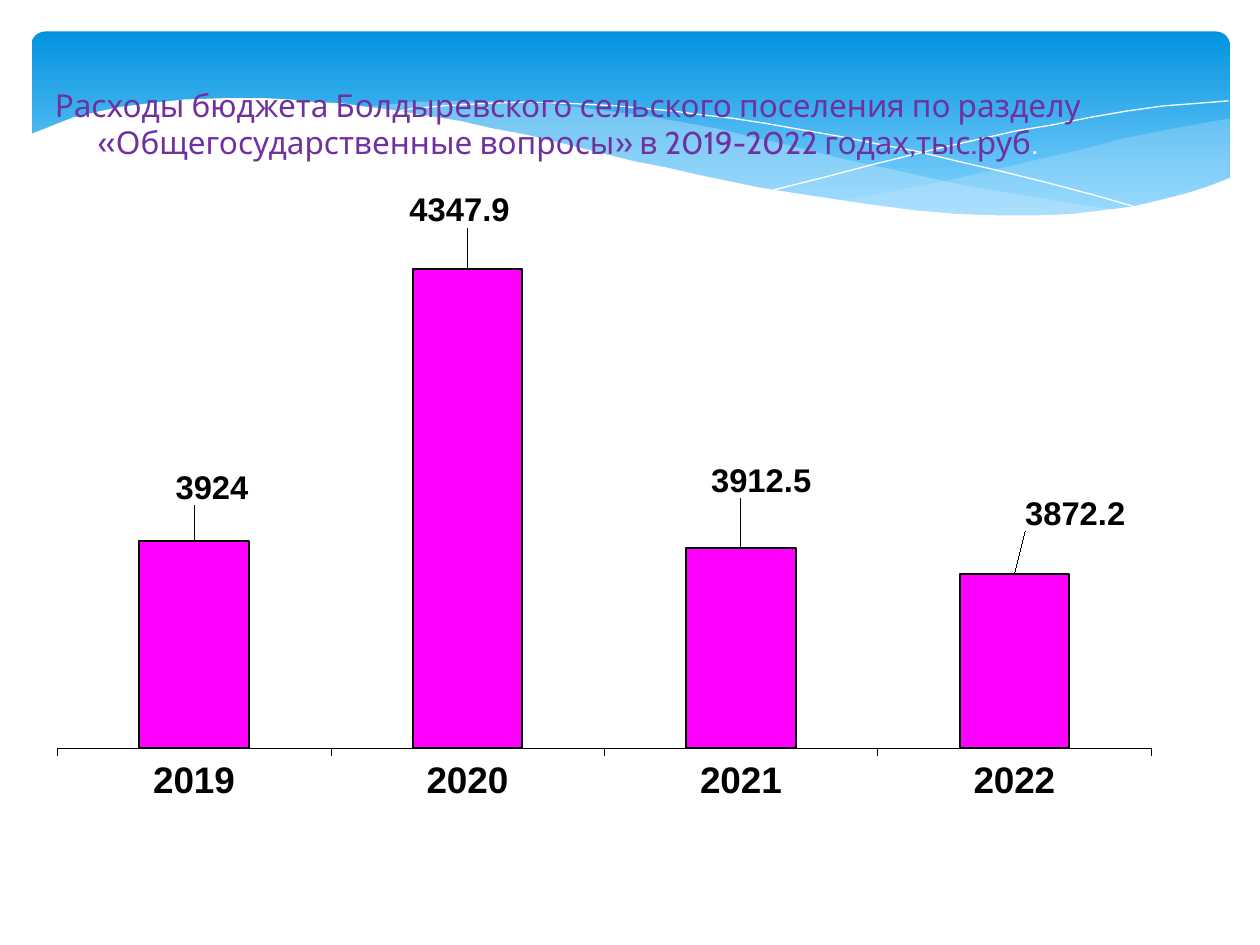
from lxml import etree
from pptx import Presentation
from pptx.chart.data import CategoryChartData
from pptx.dml.color import RGBColor
from pptx.enum.chart import (XL_CHART_TYPE, XL_LABEL_POSITION,
                             XL_TICK_LABEL_POSITION, XL_TICK_MARK)
from pptx.enum.shapes import MSO_SHAPE
from pptx.enum.text import MSO_ANCHOR, PP_ALIGN
from pptx.oxml.ns import qn
from pptx.util import Inches, Pt

COLUMN = XL_CHART_TYPE.COLUMN_CLUSTERED
OUT_END = XL_LABEL_POSITION.OUTSIDE_END
LOW = XL_TICK_LABEL_POSITION.LOW
TICK_OUT, TICK_NONE = XL_TICK_MARK.OUTSIDE, XL_TICK_MARK.NONE
ROUND = MSO_SHAPE.ROUNDED_RECTANGLE
CENTER, MIDDLE = PP_ALIGN.CENTER, MSO_ANCHOR.MIDDLE

WHITE = RGBColor(0xFF, 0xFF, 0xFF)
BLACK = RGBColor(0, 0, 0)
BLUE = RGBColor(0x02, 0x93, 0xE0)
SKY = RGBColor(0x83, 0xD3, 0xFE)
PALE = RGBColor(0xC6, 0xE7, 0xFC)
PURPLE = RGBColor(0x70, 0x30, 0xA0)
PINK = RGBColor(0xFF, 0x00, 0xFF)

# Outlines of the header waves, in inches
RIGHT = [(9.76, 0.94), (9.48, 0.99), (9.21, 1.04), (8.91, 1.1), (8.61, 1.18),
         (8.05, 1.31), (7.53, 1.43), (7.06, 1.52), (6.61, 1.6), (6.91, 1.64),
         (7.19, 1.67), (7.45, 1.69), (7.69, 1.71), (7.92, 1.72), (8.35, 1.72),
         (8.63, 1.7), (8.89, 1.66), (9.13, 1.62), (9.35, 1.56), (9.49, 1.52),
         (9.63, 1.47), (9.76, 1.41)]
MID = [(8.93, 1.67), (8.66, 1.64), (8.37, 1.59), (8.07, 1.54), (7.75, 1.49),
       (7.41, 1.42), (7.06, 1.34), (6.68, 1.26), (6.29, 1.16), (5.98, 1.09),
       (5.69, 1.02), (5.41, 0.97), (5.14, 0.92), (4.89, 0.89), (4.65, 0.86),
       (4.42, 0.83), (4.2, 0.82), (3.99, 0.8), (3.61, 0.8), (3.28, 0.81),
       (2.99, 0.84), (2.86, 0.86), (3.23, 0.9), (3.62, 0.97), (4.04, 1.06),
       (4.49, 1.16), (4.91, 1.26), (5.3, 1.35), (5.66, 1.43), (6.01, 1.5),
       (6.34, 1.56), (6.65, 1.61), (6.95, 1.65), (7.22, 1.68), (7.48, 1.7),
       (7.73, 1.72), (7.96, 1.73), (8.28, 1.73), (8.57, 1.71), (8.76, 1.69)]
FALL = [(3.09, 0.9), (3.28, 0.86), (3.53, 0.84), (3.87, 0.82), (4.16, 0.81),
        (4.5, 0.82), (4.89, 0.84), (5.1, 0.86), (5.33, 0.88), (5.56, 0.91),
        (5.82, 0.94), (6.08, 0.98), (6.36, 1.03), (6.65, 1.08), (6.95, 1.14),
        (7.27, 1.2), (7.6, 1.28), (7.95, 1.36), (8.31, 1.45), (8.69, 1.55),
        (9.07, 1.66)]
RISE = [(6.13, 1.51), (6.53, 1.41), (6.95, 1.3), (7.48, 1.17), (8.06, 1.04),
        (8.36, 0.99), (8.66, 0.93), (8.95, 0.88), (9.24, 0.84), (9.51, 0.82),
        (9.75, 0.8)]
FRONT = [(9.77, 1.41), (9.59, 1.48), (9.4, 1.54), (9.2, 1.59), (8.99, 1.64),
         (8.75, 1.67), (8.5, 1.7), (8.23, 1.71), (7.93, 1.71), (7.61, 1.7),
         (7.26, 1.67), (6.88, 1.62), (6.48, 1.56), (6.03, 1.49), (5.79, 1.44),
         (5.55, 1.39), (5.29, 1.33), (5.03, 1.28), (4.75, 1.21), (4.47, 1.14),
         (4.18, 1.07), (3.91, 1.02), (3.65, 0.96), (3.4, 0.92), (3.16, 0.88),
         (2.92, 0.85), (2.71, 0.82), (2.5, 0.81), (2.3, 0.79), (2.11, 0.78),
         (1.77, 0.78), (1.46, 0.79), (1.19, 0.82), (0.95, 0.85), (0.76, 0.89),
         (0.59, 0.93), (0.46, 0.98), (0.36, 1.02), (0.23, 1.07), (0.23, 2.24),
         (9.77, 2.24)]

# Year, amount, shift of the label as a share of the chart size
SPEND = [("2019", 3924, 0.016, -0.047), ("2020", 4347.9, -0.007, -0.056),
         ("2021", 3912.5, 0.018, -0.069), ("2022", 3872.2, 0.054, -0.058)]


def style(font, size, color, name, bold=False):
    font.size, font.name, font.bold = Pt(size), name, bold
    font.color.rgb = color


def write(para, text, **look):
    run = para.add_run()
    run.text = text
    style(run.font, **look)


def banner(shapes):
    box = shapes.add_shape(ROUND, Inches(0.25), Inches(0.25),
                           Inches(9.51), Inches(1.56))
    box.adjustments[0] = 0.07
    box.shadow.inherit = False
    box.line.fill.background()
    box.fill.gradient()
    box.fill.gradient_angle = 270
    for stop, color, pos in zip(box.fill.gradient_stops, (BLUE, SKY), (0, 0.9)):
        stop.color.rgb, stop.position = color, pos


def trace(shapes, points, closed):
    spots = [(Inches(x), Inches(y)) for x, y in points]
    pen = shapes.build_freeform(*spots[0])
    pen.add_line_segments(spots[1:], close=closed)
    shape = pen.convert_to_shape()
    shape.shadow.inherit = False
    return shape


def wave(shapes, points, color, alpha=100):
    shape = trace(shapes, points, True)
    shape.line.fill.background()
    shape.fill.solid()
    shape.fill.fore_color.rgb = color
    if alpha < 100:
        tint = next(shape.element.iter(qn("a:srgbClr")))
        etree.SubElement(tint, qn("a:alpha"), val=str(alpha * 1000))


def thread(shapes, points):
    shape = trace(shapes, points, False)
    shape.fill.background()
    shape.line.color.rgb = WHITE
    shape.line.width = Pt(0)


def title(shapes):
    box = shapes.add_textbox(Inches(0.01), Inches(0.68), Inches(9), Inches(0.6))
    frame = box.text_frame
    frame.word_wrap, frame.vertical_anchor = True, MIDDLE
    frame.margin_left = frame.margin_right = 0
    frame.margin_top = frame.margin_bottom = 0
    para = frame.paragraphs[0]
    para.alignment = CENTER
    write(para, "Расходы бюджета Болдыревского сельского поселения по разделу "
          "«Общегосударственные вопросы» в 2019-2022 годах,тыс.руб",
          size=18, color=PURPLE, name="Cabin")
    write(para, ".", size=18, color=WHITE, name="Cabin")


def layout(**places):
    root = etree.Element(qn("c:layout"))
    inner = etree.SubElement(root, qn("c:manualLayout"))
    for tag, val in places.items():
        etree.SubElement(inner, qn("c:" + tag), val=str(val))
    return root


def graph(shapes):
    data = CategoryChartData()
    data.categories = [row[0] for row in SPEND]
    data.add_series("Series 1", [row[1] for row in SPEND])
    chart = shapes.add_chart(COLUMN, Inches(0.33), Inches(1.52), Inches(8.95),
                             Inches(5.09), data).chart
    chart.has_legend = chart.has_title = False
    style(chart.font, 21.1, BLACK, "Arial", True)

    # Axes
    cat, val = chart.category_axis, chart.value_axis
    cat.tick_label_position = LOW
    cat.major_tick_mark, cat.minor_tick_mark = TICK_OUT, TICK_NONE
    cat.format.line.color.rgb = BLACK
    cat.format.line.width = Pt(0.29)
    val.minimum_scale, val.maximum_scale = 3600, 4440
    val.has_major_gridlines = val.visible = False

    # Columns
    plot = chart.plots[0]
    plot.gap_width, plot.vary_by_categories = 150, False
    bars = plot.series[0]
    bars.format.fill.solid()
    bars.format.fill.fore_color.rgb = PINK
    bars.format.line.color.rgb = BLACK
    bars.format.line.width = Pt(1.17)

    # Labels, each moved off its column
    bars.data_labels.show_value = True
    style(bars.data_labels.font, 18.7, BLACK, "Arial", True)
    for i in range(len(SPEND)):
        label = bars.points[i].data_label
        label.position = OUT_END
        style(label.font, 18.7, BLACK, "Arial", True)
    nodes = chart.element.iter(qn("c:dLbl"))
    for node, (_, _, x, y) in zip(nodes, SPEND):
        node.insert(1, layout(x=x, y=y))

    # Plot area
    area = next(chart.element.iter(qn("c:plotArea")))
    for old in area.findall(qn("c:layout")):
        area.remove(old)
    area.insert(0, layout(layoutTarget="inner", xMode="edge", yMode="edge",
                          x=0.014, y=0.029, w=0.97, h=0.839))


def main():
    prs = Presentation()
    prs.slide_width, prs.slide_height = Inches(10), Inches(7.5)
    shapes = prs.slides.add_slide(prs.slide_layouts[6]).shapes
    banner(shapes)
    wave(shapes, RIGHT, PALE, alpha=29)
    wave(shapes, MID, PALE, alpha=40)
    thread(shapes, FALL)
    thread(shapes, RISE)
    wave(shapes, FRONT, WHITE)
    title(shapes)
    graph(shapes)
    prs.save("out.pptx")


if __name__ == "__main__":
    main()
